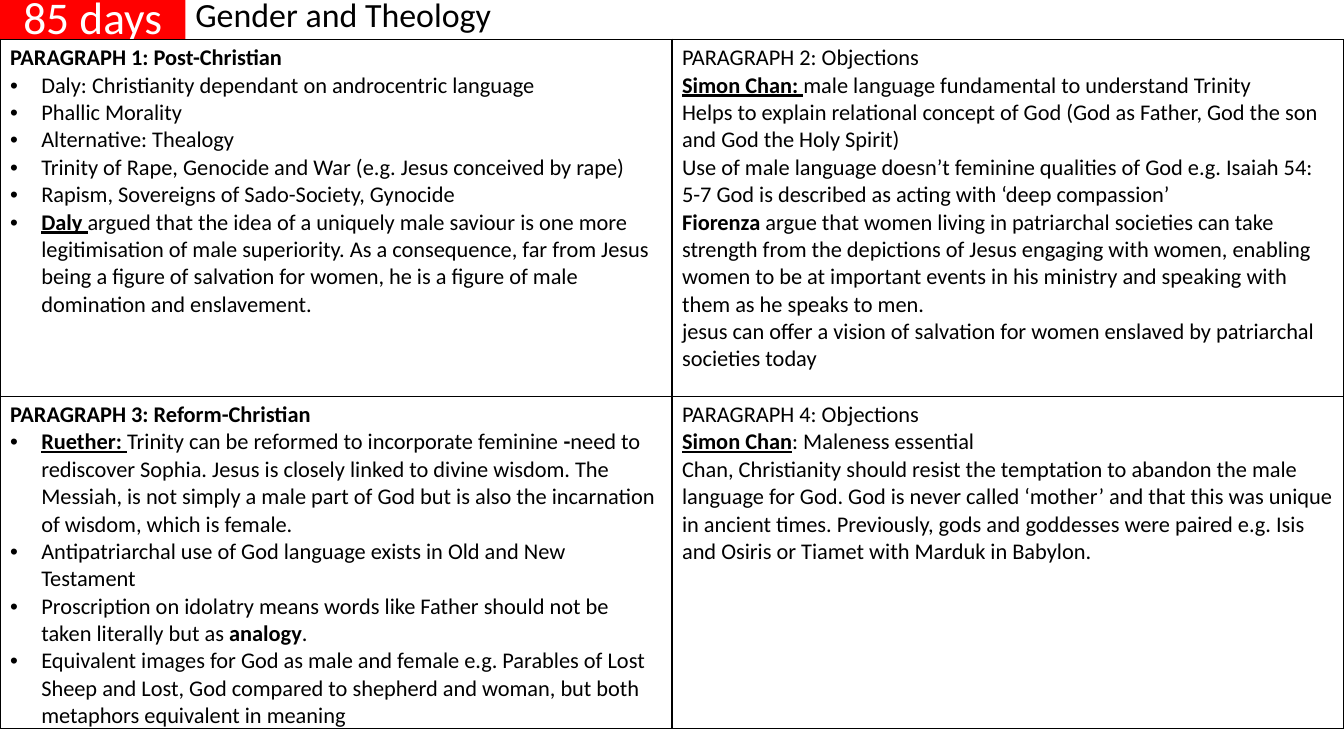
import dataclasses

import lxml.etree
import pptx
import pptx.dml.color
import pptx.enum.shapes
import pptx.enum.text
import pptx.oxml.ns
import pptx.util

ALIGN = pptx.enum.text.PP_ALIGN
ANCHOR = pptx.enum.text.MSO_ANCHOR


@dataclasses.dataclass(frozen=True)
class Theme:
    font: str = "Calibri"
    ink: str = "000000"
    paper: str = "FFFFFF"
    accent: str = "FF0000"
    countdown: float = 32.4
    heading: float = 24.2
    body: float = 16
    border: float = 1
    indent: float = 0.31


BOLD = {"bold": True}
KEY = {"bold": True, "underline": True}

POST_CHRISTIAN = [
    (False, [("PARAGRAPH 1: Post-Christian", BOLD)]),
    (True, [("Daly: Christianity dependant on androcentric language", {})]),
    (True, [("Phallic Morality", {})]),
    (True, [("Alternative: Thealogy", {})]),
    (True, [("Trinity of Rape, Genocide and War (e.g. Jesus conceived by rape)", {})]),
    (True, [("Rapism, Sovereigns of Sado-Society, Gynocide", {})]),
    (True, [("Daly ", KEY),
            ("argued that the idea of a uniquely male saviour is one more legitimisation of "
             "male superiority. As a consequence, far from Jesus being a figure of salvation "
             "for women, he is a figure of male domination and enslavement.", {})]),
]
POST_CHRISTIAN_OBJECTIONS = [
    (False, [("PARAGRAPH 2: Objections", {})]),
    (False, [("Simon Chan: ", KEY), ("male language fundamental to understand Trinity", {})]),
    (False, [("Helps to explain relational concept of God (God as Father, God the son and "
              "God the Holy Spirit)", {})]),
    (False, [("Use of male language doesn’t feminine qualities of God e.g. Isaiah 54: 5-7 "
              "God is described as acting with ‘deep compassion’", {})]),
    (False, [("Fiorenza", BOLD),
             (" argue that women living in patriarchal societies can take strength from the "
              "depictions of Jesus engaging with women, enabling women to be at important "
              "events in his ministry and speaking with them as he speaks to men.", {})]),
    (False, [("jesus can offer a vision of salvation for women enslaved by patriarchal "
              "societies today", {})]),
]
REFORM_CHRISTIAN = [
    (False, [("PARAGRAPH 3: Reform-Christian", BOLD)]),
    (True, [("Ruether: ", KEY), ("Trinity can be reformed to incorporate feminine", {}),
            (" -", BOLD),
            ("need to rediscover Sophia. Jesus is closely linked to divine wisdom. The "
             "Messiah, is not simply a male part of God but is also the incarnation of "
             "wisdom, which is female.", {})]),
    (True, [("Antipatriarchal use of God language exists in Old and New Testament", {})]),
    (True, [("Proscription on idolatry means words like Father should not be taken "
             "literally but as ", {}), ("analogy", BOLD), (".", {})]),
    (True, [("Equivalent images for God as male and female e.g. Parables of Lost Sheep and "
             "Lost, God compared to shepherd and woman, but both metaphors equivalent in "
             "meaning", {})]),
]
REFORM_CHRISTIAN_OBJECTIONS = [
    (False, [("PARAGRAPH 4: Objections", {})]),
    (False, [("Simon Chan", KEY), (": Maleness essential", {})]),
    (False, [("Chan, Christianity should resist the temptation to abandon the male language "
              "for God. God is never called ‘mother’ and that this was unique in ancient "
              "times. Previously, gods and goddesses were paired e.g. Isis and Osiris or "
              "Tiamet with Marduk in Babylon.", {})]),
]


def rgb(value):
    return pptx.dml.color.RGBColor.from_string(value)


def add_text(p, text, font, size, color, bold=False, underline=False):
    r = p.add_run()
    r.text = text
    r.font.name = font
    r.font.size = pptx.util.Pt(size)
    r.font.color.rgb = rgb(color)
    r.font.bold = bold
    r.font.underline = underline


class Board:
    def __init__(self, prs, theme):
        self.prs = prs
        self.theme = theme
        self.s = prs.slides.add_slide(prs.slide_layouts[6])

    def x(self, columns):
        return round(self.prs.slide_width * columns / 100)

    def y(self, rows):
        return round(self.prs.slide_height * rows / 100)

    def box(self, left, top, width, height):
        return self.x(left), self.y(top), self.x(width), self.y(height)

    def line(self, tf, text, size, color, align, spacing, before=0):
        tf.word_wrap = True
        p = tf.paragraphs[0]
        p.alignment = align
        p.line_spacing = spacing
        p.space_before = pptx.util.Pt(before)
        add_text(p, text, self.theme.font, size, color)

    def countdown(self, text, *place):
        sp = self.s.shapes.add_shape(
            pptx.enum.shapes.MSO_SHAPE.RECTANGLE, *self.box(*place))
        sp.shadow.inherit = False
        sp.fill.solid()
        sp.fill.fore_color.rgb = rgb(self.theme.accent)
        sp.line.fill.background()
        sp.text_frame.vertical_anchor = ANCHOR.MIDDLE
        self.line(sp.text_frame, text, self.theme.countdown, self.theme.paper,
                  ALIGN.CENTER, 0.9)

    def heading(self, text, *place):
        sp = self.s.shapes.add_textbox(*self.box(*place))
        sp.text_frame.vertical_anchor = ANCHOR.TOP
        self.line(sp.text_frame, text, self.theme.heading, self.theme.ink,
                  ALIGN.LEFT, 0.7, 10)

    def table(self, cells, top, heights):
        frame = self.s.shapes.add_table(
            len(cells), len(cells[0]), *self.box(0, top, 100, sum(heights)))
        table = frame.table
        table.first_row = table.horz_banding = False
        for row, height, contents in zip(table.rows, heights, cells):
            row.height = self.y(height)
            for cell, paragraphs in zip(row.cells, contents):
                self.borders(cell)
                cell.fill.background()
                self.notes(cell.text_frame, paragraphs)

    def borders(self, cell):
        qn = pptx.oxml.ns.qn
        tcPr = cell._tc.get_or_add_tcPr()
        for side in ("a:lnL", "a:lnR", "a:lnT", "a:lnB"):
            ln = lxml.etree.SubElement(
                tcPr, qn(side), w=str(pptx.util.Pt(self.theme.border)))
            fill = lxml.etree.SubElement(ln, qn("a:solidFill"))
            lxml.etree.SubElement(fill, qn("a:srgbClr"), val=self.theme.ink)

    def notes(self, tf, paragraphs):
        for i, (bulleted, runs) in enumerate(paragraphs):
            p = tf.add_paragraph() if i else tf.paragraphs[0]
            if bulleted:
                self.bullet(p)
            for text, style in runs:
                add_text(p, text, self.theme.font, self.theme.body, self.theme.ink, **style)

    def bullet(self, p):
        qn = pptx.oxml.ns.qn
        indent = pptx.util.Inches(self.theme.indent)
        pPr = p._p.get_or_add_pPr()
        pPr.set("marL", str(indent))
        pPr.set("indent", str(-indent))
        lxml.etree.SubElement(pPr, qn("a:buFont"), typeface="Arial")
        lxml.etree.SubElement(pPr, qn("a:buChar"), char="•")


def main():
    prs = pptx.Presentation()
    prs.slide_width = pptx.util.Inches(13.33)
    prs.slide_height = pptx.util.Inches(7.5)
    board = Board(prs, Theme())
    header, badge = 5.2, 13.8
    board.countdown("85 days", 0, 0, badge, header)
    board.heading("Gender and Theology", badge, 0, 100 - badge, header)
    board.table([[POST_CHRISTIAN, POST_CHRISTIAN_OBJECTIONS],
                 [REFORM_CHRISTIAN, REFORM_CHRISTIAN_OBJECTIONS]],
                header, [47.2, 41.07])
    prs.save("out.pptx")


if __name__ == "__main__":
    main()
